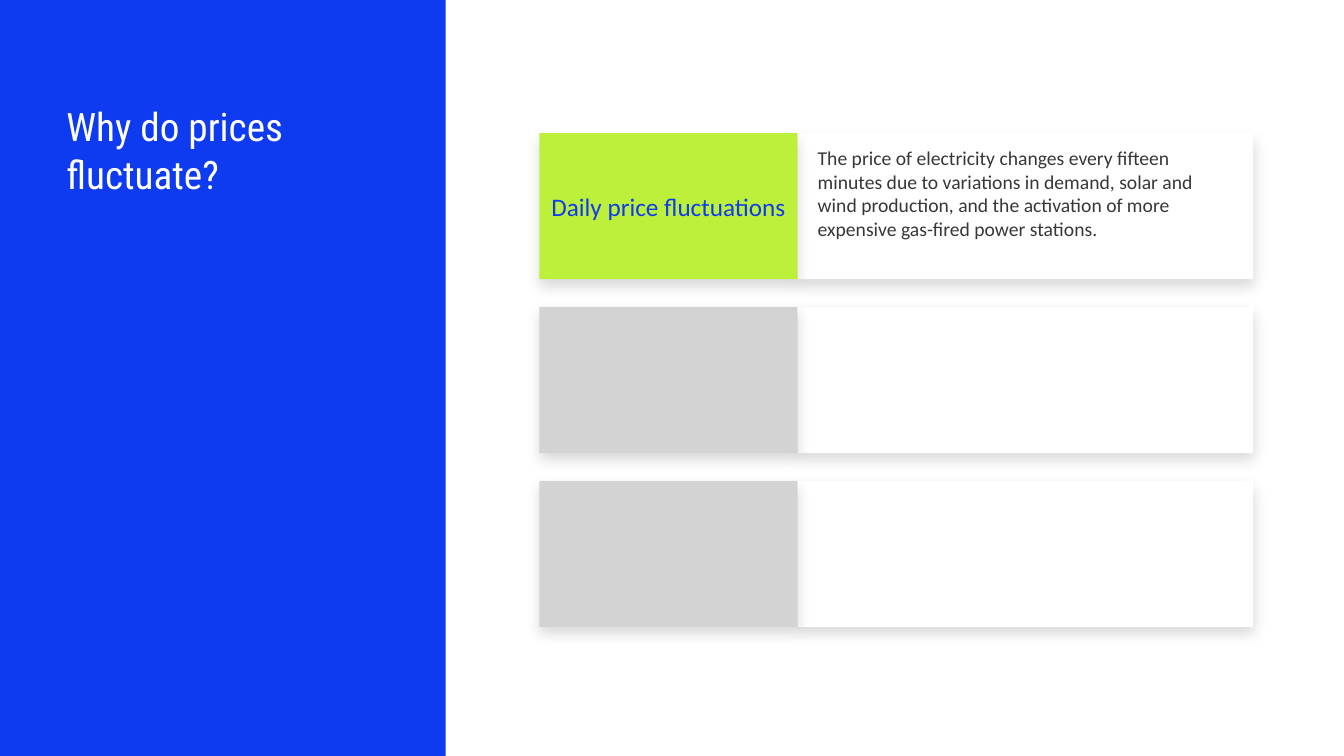
"""Build the slide on why electricity prices fluctuate."""
from lxml import etree
from pptx import Presentation
from pptx.dml.color import RGBColor
from pptx.enum.shapes import MSO_SHAPE
from pptx.enum.text import MSO_ANCHOR, PP_ALIGN
from pptx.oxml.ns import qn
from pptx.util import Inches, Pt

TITLE = "Why do prices fluctuate?"
ROWS = [
    ("Daily price fluctuations",
     "The price of electricity changes every fifteen minutes due to variations "
     "in demand, solar and wind production, and the activation of more "
     "expensive gas-fired power stations."),
    ("", ""),
    ("", ""),
]
BLUE, LIME, GREY, WHITE, INK = "0E3AF0", "BDF03A", "D3D3D3", "FFFFFF", "373737"

SLIDE_W, SLIDE_H = 13.33, 7.5
PANEL_W = 4.42
TOP, PITCH, ROW_H = 1.32, 1.725, 1.45
LABEL_X, LABEL_W, BODY_W = 5.35, 2.56, 4.52
BODY_X = LABEL_X + LABEL_W

TITLE_FORMAT = dict(name="Roboto Condensed", size=28, color=WHITE)
LABEL_FORMAT = dict(name="Calibri", size=18, color=BLUE)
BODY_FORMAT = dict(name="Calibri", size=14, color=INK)
TITLE_FRAME = dict(margin_left=0.1, margin_right=0.1, margin_top=0.05, margin_bottom=0.05)
LABEL_FRAME = dict(margin_left=0.08, margin_right=0.08, margin_top=0.04, margin_bottom=0.04)
BODY_FRAME = dict(margin_left=0.2, margin_right=0.2, margin_top=0.13, margin_bottom=0.04)


def rgb(value):
    """Turn a hex string into a colour."""
    return RGBColor.from_string(value)


def add_rect(s, box, fill):
    """Add a plain filled rectangle."""
    sp = s.shapes.add_shape(MSO_SHAPE.RECTANGLE, *map(Inches, box))
    sp.fill.solid()
    sp.fill.fore_color.rgb = rgb(fill)
    sp.line.fill.background()
    sp.shadow.inherit = False
    return sp


def add_shadow(sp):
    """Give a shape a soft downward shadow."""
    effects = sp._element.spPr.find(qn("a:effectLst"))
    shadow = etree.SubElement(effects, qn("a:outerShdw"), blurRad=str(Pt(10)),
                              dist=str(Pt(5)), dir="5400000", algn="t", rotWithShape="0")
    color = etree.SubElement(shadow, qn("a:srgbClr"), val="000000")
    etree.SubElement(color, qn("a:alpha"), val="15000")


def write(sp, text, font, frame, anchor=MSO_ANCHOR.TOP, align=PP_ALIGN.LEFT):
    """Put one formatted paragraph into a shape."""
    tf = sp.text_frame
    tf.word_wrap = True
    tf.vertical_anchor = anchor
    for name, value in frame.items():
        setattr(tf, name, Inches(value))
    p = tf.paragraphs[0]
    p.alignment = align
    r = p.add_run()
    r.text = text
    for name, value in dict(name=font["name"], size=Pt(font["size"])).items():
        setattr(r.font, name, value)
    r.font.color.rgb = rgb(font["color"])


def add_column(s, x, width, fills, texts, **style):
    """Stack one column of shadowed cards."""
    for i, (fill, text) in enumerate(zip(fills, texts)):
        sp = add_rect(s, (x, TOP + i * PITCH, width, ROW_H), fill)
        add_shadow(sp)
        if text:
            write(sp, text, **style)


def main():
    """Create and save the slide."""
    prs = Presentation()
    prs.slide_width, prs.slide_height = Inches(SLIDE_W), Inches(SLIDE_H)
    s = prs.slides.add_slide(prs.slide_layouts[6])
    add_rect(s, (0, 0, PANEL_W, SLIDE_H), BLUE)
    title = s.shapes.add_textbox(*map(Inches, (0.56, 0.97, 3.31, 1.51)))
    write(title, TITLE, TITLE_FORMAT, TITLE_FRAME)

    labels, bodies = zip(*ROWS)
    add_column(s, BODY_X, BODY_W, [WHITE] * len(ROWS), bodies,
               font=BODY_FORMAT, frame=BODY_FRAME)
    add_column(s, LABEL_X, LABEL_W, [LIME if t else GREY for t in labels], labels,
               font=LABEL_FORMAT, frame=LABEL_FRAME,
               anchor=MSO_ANCHOR.MIDDLE, align=PP_ALIGN.CENTER)
    prs.save("out.pptx")


if __name__ == "__main__":
    main()
